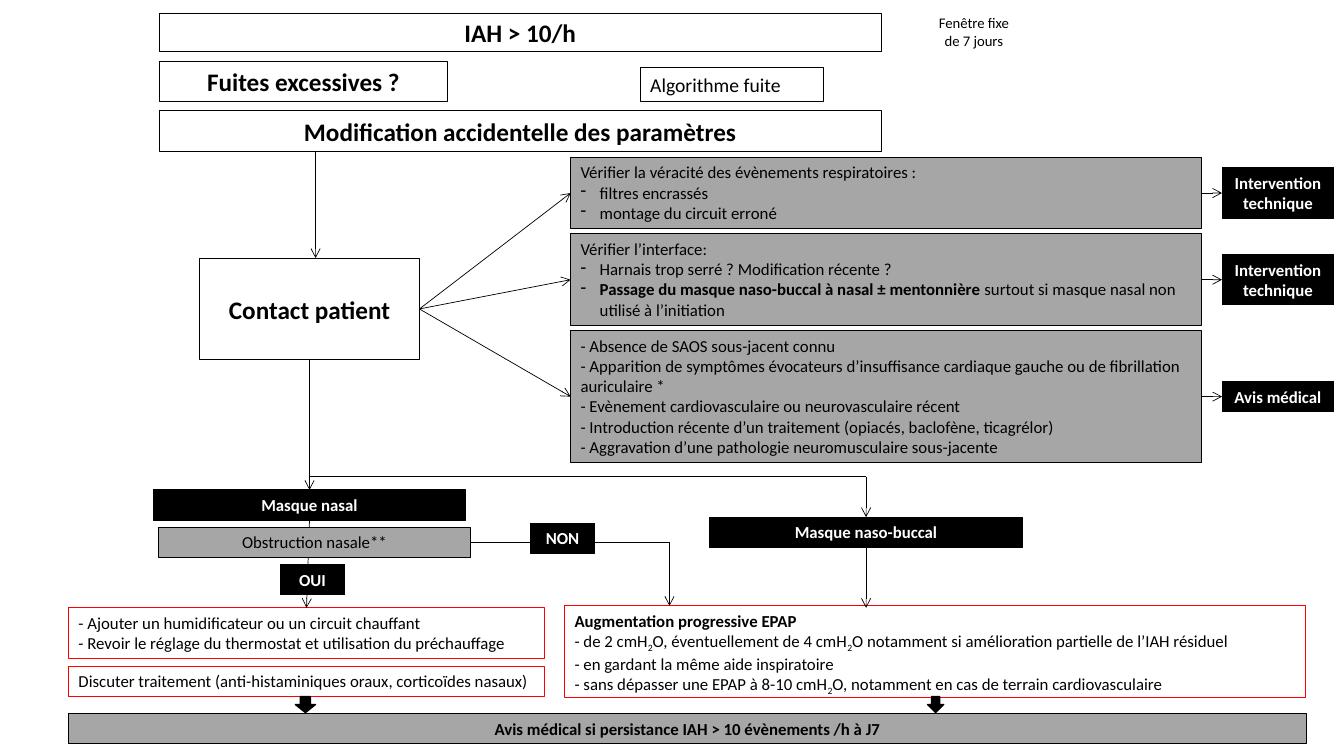
from lxml import etree
from pptx import Presentation
from pptx.dml.color import RGBColor
from pptx.enum.shapes import MSO_CONNECTOR, MSO_SHAPE
from pptx.enum.text import MSO_ANCHOR, PP_ALIGN
from pptx.oxml.ns import qn
from pptx.util import Inches, Pt

COLORS = {"black": "000000", "white": "FFFFFF", "grey": "A6A6A6", "red": "FF0000"}
STYLES = {
    "heading": dict(size=18, bold=True, center=True),
    "note": dict(size=14),
    "caption": dict(size=10.5, center=True, line=None),
    "check": dict(fill="grey"),
    "step": dict(fill="grey", center=True),
    "verdict": dict(fill="grey", center=True, bold=True),
    "label": dict(fill="black", ink="white", center=True, bold=True),
    "action": dict(line="red"),
}
COLUMNS = {
    "main": (1.58, 7.16), "leak": (1.58, 2.86), "algorithm": (6.35, 1.82),
    "window": (9.18, 0.96), "contact": (1.98, 2.18), "checks": (5.66, 6.26),
    "answers": (12.12, 1.11), "nasal": (1.52, 3.1), "blocked": (1.57, 3.1),
    "oronasal": (7.04, 3.1), "yes": (2.78, 0.64), "no": (5.26, 0.64),
    "left": (0.68, 4.72), "right": (5.6, 7.35), "full": (0.68, 12.28),
}
BOXES = [
    ("iah", "main", 0.13, 0.38, "heading", ["IAH > 10/h"]),
    ("leak", "leak", 0.61, 0.4, "heading", ["Fuites excessives ?"]),
    ("algorithm", "algorithm", 0.67, 0.34, "note", ["Algorithme fuite"]),
    ("settings", "main", 1.1, 0.4, "heading", ["Modification accidentelle des paramètres"]),
    ("window", "window", 0.09, 0.45, "caption", ["Fenêtre fixe de 7 jours"]),
    ("contact", "contact", 2.56, 1.01, "heading", ["Contact patient"]),
    ("nasal", "nasal", 4.86, 0.3, "label", ["Masque nasal"]),
    ("blocked", "blocked", 5.23, 0.3, "step", ["Obstruction nasale**"]),
    ("yes", "yes", 5.6, 0.3, "label", ["OUI"]),
    ("no", "no", 5.19, 0.3, "label", ["NON"]),
    ("oronasal", "oronasal", 5.13, 0.3, "label", ["Masque naso-buccal"]),
    ("humidifier", "left", 6.03, 0.5, "action", [
        "- Ajouter un humidificateur ou un circuit chauffant",
        "- Revoir le réglage du thermostat et utilisation du préchauffage"]),
    ("treatment", "left", 6.61, 0.3, "action", [
        "Discuter traitement (anti-histaminiques oraux, corticoïdes nasaux)"]),
    ("epap", "right", 6.01, 0.91, "action", [
        [("Augmentation progressive EPAP", "bold")],
        [("- de 2 cmH", ""), ("2", "sub"), ("O, éventuellement de 4 cmH", ""), ("2", "sub"),
         ("O notamment si amélioration partielle de l’IAH résiduel", "")],
        "- en gardant la même aide inspiratoire",
        [("- sans dépasser une EPAP à 8-10 cmH", ""), ("2", "sub"),
         ("O, notamment en cas de terrain cardiovasculaire", "")]]),
    ("verdict", "full", 7.08, 0.3, "verdict", [
        "Avis médical si persistance IAH > 10 évènements /h à J7"]),
]
CHECKS_TOP, CHECKS_GAP = 1.56, 0.05
CHECKS = [
    ("events", 0.71, True, ["Vérifier la véracité des évènements respiratoires :",
                            "filtres encrassés", "montage du circuit erroné"],
     0.5, ["Intervention", "technique"]),
    ("interface", 0.91, True, [
        "Vérifier l’interface:", "Harnais trop serré ? Modification récente ?",
        [("Passage du masque naso-buccal à nasal ± mentonnière ", "bold"),
         ("surtout si masque nasal non utilisé à l’initiation", "")]],
     0.5, ["Intervention", "technique"]),
    ("medical", 1.31, False, [
        "- Absence de SAOS sous-jacent connu",
        "- Apparition de symptômes évocateurs d’insuffisance cardiaque gauche "
        "ou de fibrillation auriculaire *",
        "- Evènement cardiovasculaire ou neurovasculaire récent",
        "- Introduction récente d’un traitement (opiacés, baclofène, ticagrélor)",
        "- Aggravation d’une pathologie neuromusculaire sous-jacente"],
     0.3, ["Avis médical"]),
]
TOP, LEFT, BOTTOM, RIGHT = range(4)
BRANCH_Y, NO_X, NO_Y, ORO_X = 4.73, 6.64, 5.38, 8.59
LINKS = [
    ((3.13, 1.5), (3.13, 2.56), True),
    (("contact", BOTTOM), ("nasal", TOP), True),
    ((3.07, BRANCH_Y), (ORO_X, BRANCH_Y), False),
    ((ORO_X, BRANCH_Y), ("oronasal", TOP), True),
    (("oronasal", BOTTOM), (ORO_X, 6.03), True),
    (("nasal", BOTTOM), ("humidifier", TOP), True),
    (("blocked", RIGHT), (NO_X, NO_Y), False),
    ((NO_X, NO_Y), (NO_X, 6.01), True),
]
COVERS = ["blocked", "yes", "no"]
DOWN_ARROWS = [(2.93, 0.2), (9.2, 0.16)]


def rgb(name):
    return RGBColor.from_string(COLORS[name])


def paint(sp, fill, line, width):
    sp.shadow.inherit = False
    if fill:
        sp.fill.solid()
        sp.fill.fore_color.rgb = rgb(fill)
    else:
        sp.fill.background()
    if line:
        sp.line.color.rgb = rgb(line)
        sp.line.width = Pt(width)
    else:
        sp.line.fill.background()


def add_box(s, column, top, height, style, paragraphs, bullets=False):
    left, width = COLUMNS[column]
    look = STYLES[style]
    sp = s.shapes.add_shape(MSO_SHAPE.RECTANGLE, *map(Inches, (left, top, width, height)))
    paint(sp, look.get("fill"), look.get("line", "black"), 0.75)
    tf = sp.text_frame
    tf.word_wrap = True
    tf.vertical_anchor = MSO_ANCHOR.MIDDLE if style == "heading" else MSO_ANCHOR.TOP
    for i, runs in enumerate(paragraphs):
        p = tf.add_paragraph() if i else tf.paragraphs[0]
        p.alignment = PP_ALIGN.CENTER if look.get("center") else PP_ALIGN.LEFT
        if bullets and i:
            pPr = p._p.get_or_add_pPr()
            pPr.set("marL", str(Inches(0.19)))
            pPr.set("indent", str(-Inches(0.19)))
            etree.SubElement(pPr, qn("a:buChar")).set("char", "-")
        for text, kind in [(runs, "")] if isinstance(runs, str) else runs:
            r = p.add_run()
            r.text = text
            r.font.name = "Calibri"
            r.font.size = Pt(look.get("size", 12))
            r.font.bold = look.get("bold", False) or kind == "bold"
            r.font.color.rgb = rgb(look.get("ink", "black"))
            if kind == "sub":
                r._r.get_or_add_rPr().set("baseline", "-25000")
    return sp


def add_link(s, boxes, start, end, arrow):
    points = [(0, 0) if isinstance(e[0], str) else e for e in (start, end)]
    c = s.shapes.add_connector(MSO_CONNECTOR.STRAIGHT, *[Inches(v) for xy in points for v in xy])
    for place, join in ((start, c.begin_connect), (end, c.end_connect)):
        if isinstance(place[0], str):
            join(boxes[place[0]], place[1])
    c.line.color.rgb = rgb("black")
    c.line.width = Pt(0.5)
    if arrow:
        etree.SubElement(c.line._get_or_add_ln(), qn("a:tailEnd")).set("type", "arrow")
    etree.SubElement(c._element.spPr, qn("a:effectLst"))


def main():
    prs = Presentation()
    prs.slide_width, prs.slide_height = Inches(13.33), Inches(7.5)
    s = prs.slides.add_slide(prs.slide_layouts[6])
    boxes = {name: add_box(s, *rest) for name, *rest in BOXES}
    links = list(LINKS)
    top = CHECKS_TOP
    for name, height, bullets, text, answer_height, answer in CHECKS:
        reply = name + " answer"
        boxes[name] = add_box(s, "checks", top, height, "check", text, bullets)
        boxes[reply] = add_box(s, "answers", top + (height - answer_height) / 2,
                               answer_height, "label", answer)
        links += [(("contact", RIGHT), (name, LEFT), True), ((name, RIGHT), (reply, LEFT), True)]
        top += height + CHECKS_GAP
    for start, end, arrow in links:
        add_link(s, boxes, start, end, arrow)
    for name in COVERS:
        s.shapes._spTree.append(boxes[name]._element)
    for left, width in DOWN_ARROWS:
        sp = s.shapes.add_shape(MSO_SHAPE.DOWN_ARROW, *map(Inches, (left, 6.91, width, 0.16)))
        paint(sp, "black", "black", 1)
    prs.save("out.pptx")


if __name__ == "__main__":
    main()
